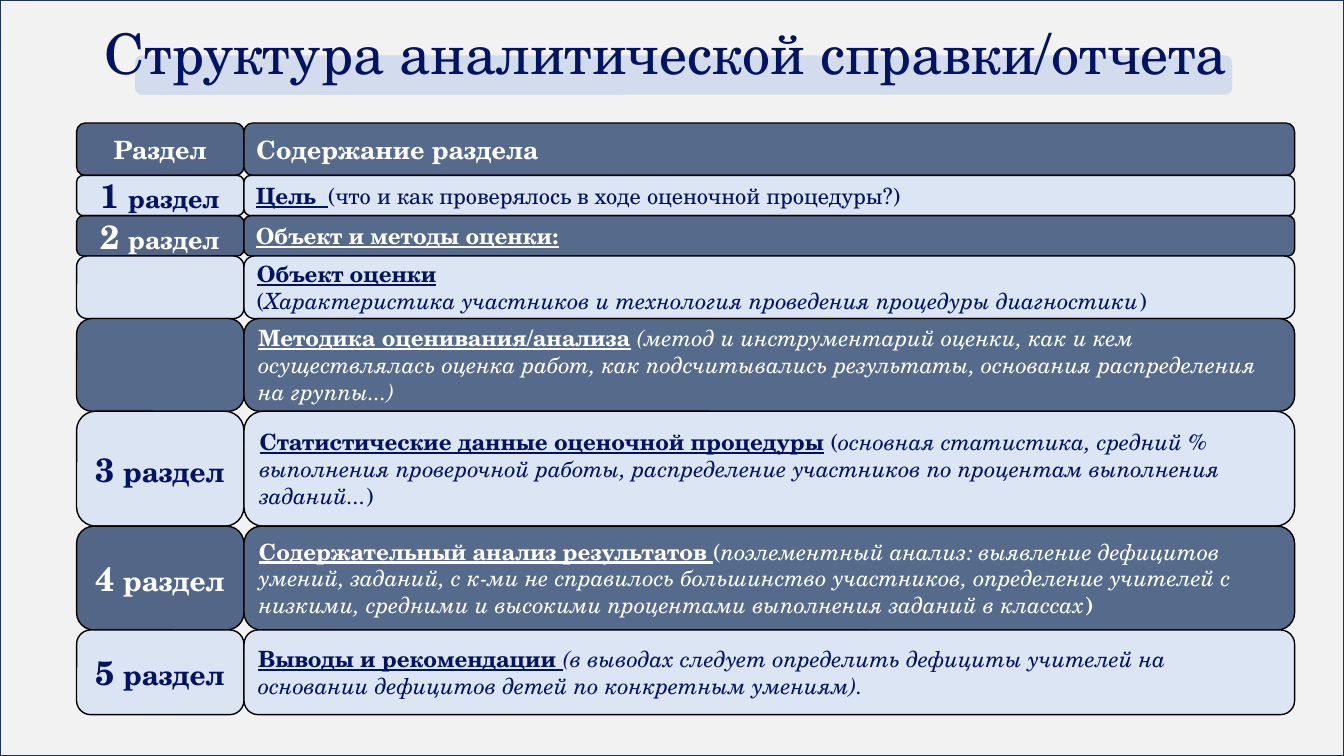
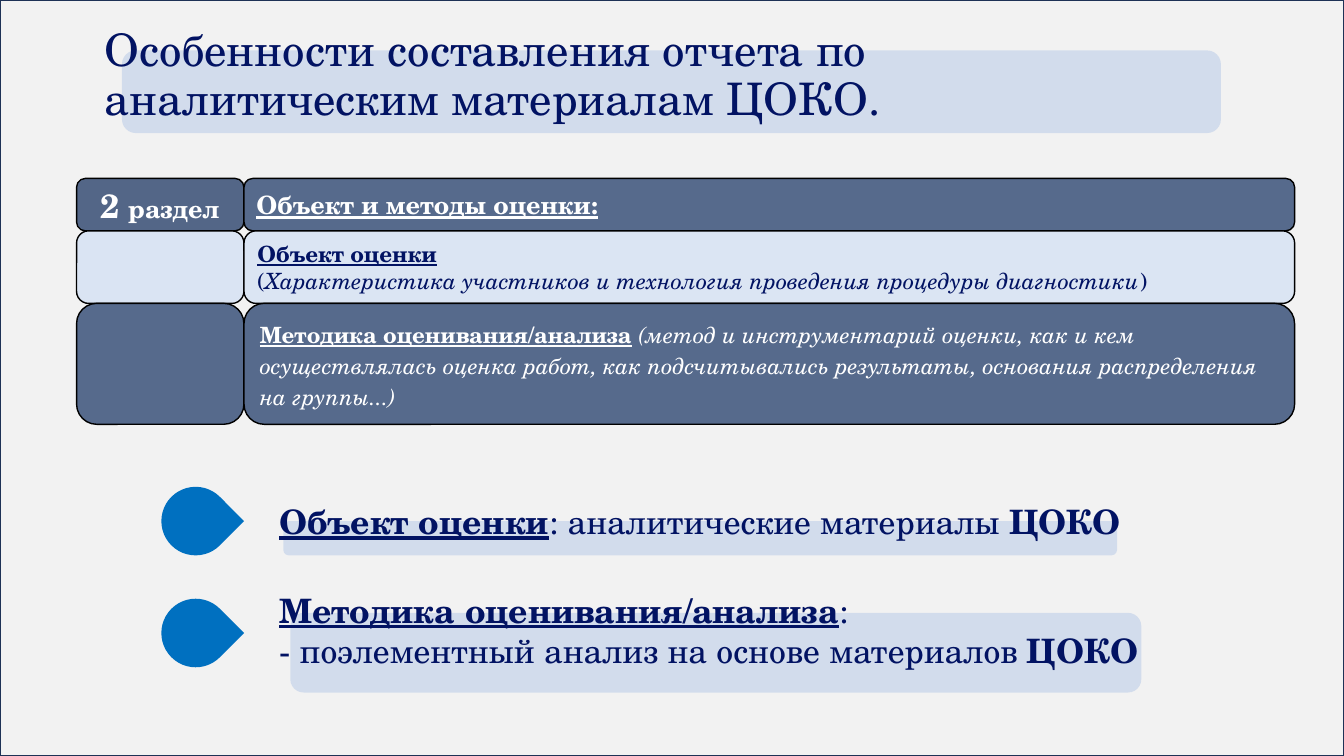
import pptx
import pptx.util
import pptx.dml.color
import pptx.enum.shapes
import pptx.enum.text
import pptx.oxml
import pptx.oxml.ns

WIDTH, HEIGHT = 13.33, 7.5
FONT = "TeX Gyre Schola"
PAGE, PAGE_EDGE = "F2F2F2", "1E3256"
NAVY, WHITE, BLACK = "021363", "FFFFFF", "000000"
DARK, LIGHT = "566A8C", "DBE5F3"
LABEL_DARK, LABEL_LIGHT = "1E3864", "DAE4F3"
HIGHLIGHT, MARKER = "B4C7E7", "0070C0"
TABLE_LEFT, LABEL_WIDTH, CONTENT_WIDTH = 0.76, 1.66, 10.42

SHAPES = pptx.enum.shapes.MSO_SHAPE
ALIGN = pptx.enum.text.PP_ALIGN
MIDDLE = pptx.enum.text.MSO_ANCHOR.MIDDLE

OBJECT_TEXT = [
    [("Объект оценки", "bu", 16)],
    [("(", "", 16),
     ("Характеристика участников и технология проведения процедуры диагностики", "i", 16),
     (")", "", 16)],
]
METHOD_TEXT = [[
    ("Методика оценивания/анализа", "bu", 16), (" ", "", 16),
    ("(метод и инструментарий оценки, как и кем осуществлялась оценка работ, "
     "как подсчитывались результаты, основания распределения на группы...)", "i", 16),
]]


def inches(*lengths):
    return [pptx.util.Inches(length) for length in lengths]


def paint(colour_owner, colour, opacity=100):
    colour_owner.solid()
    colour_owner.fore_color.rgb = pptx.dml.color.RGBColor.from_string(colour)
    if opacity < 100:
        choice = colour_owner.fore_color._xFill[0]
        alpha = pptx.oxml.parse_xml(
            f'<a:alpha {pptx.oxml.ns.nsdecls("a")} val="{opacity * 1000}"/>')
        choice.append(alpha)


def add_box(slide, kind, box, fill, opacity=100, edge=None):
    shape = slide.shapes.add_shape(kind, *inches(*box))
    shape.shadow.inherit = False
    paint(shape.fill, fill, opacity)
    if edge:
        paint(shape.line.fill, edge)
        shape.line.width = pptx.util.Pt(1)
    else:
        shape.line.fill.background()
    return shape


def write(frame, paragraphs, colour, align=ALIGN.LEFT, spacing=None):
    frame.word_wrap = True
    for index, pieces in enumerate(paragraphs):
        paragraph = frame.add_paragraph() if index else frame.paragraphs[0]
        paragraph.alignment = align
        if spacing:
            paragraph.line_spacing = spacing
        for words, style, size in pieces:
            run = paragraph.add_run()
            run.text = words
            run.font.name = FONT
            run.font.size = pptx.util.Pt(size)
            run.font.bold = "b" in style
            run.font.italic = "i" in style
            run.font.underline = "u" in style
            paint(run.font.fill, colour)


def add_page(deck, heading, size, heading_box, band_box):
    slide = deck.slides.add_slide(deck.slide_layouts[5])
    title = slide.shapes.title
    page = add_box(slide, SHAPES.RECTANGLE, (0, 0, WIDTH, HEIGHT), PAGE, edge=PAGE_EDGE)
    band = add_highlight(slide, band_box)
    for backdrop in (page, band):
        title._element.addprevious(backdrop._element)
    title.left, title.top, title.width, title.height = inches(*heading_box)
    title.text_frame.auto_size = pptx.enum.text.MSO_AUTO_SIZE.NONE
    title.text_frame.vertical_anchor = MIDDLE
    write(title.text_frame, [[(heading, "", size)]], NAVY, spacing=0.9)
    return slide


def add_highlight(slide, box):
    return add_box(slide, SHAPES.ROUNDED_RECTANGLE, box, HIGHLIGHT, 50)


def add_cell(slide, box, fill, opacity, paragraphs, colour, align, spacing=None):
    cell = add_box(slide, SHAPES.ROUNDED_RECTANGLE, box, fill, opacity, BLACK)
    cell.text_frame.vertical_anchor = MIDDLE
    write(cell.text_frame, paragraphs, colour, align, spacing)


def add_sections(slide, top, rows):
    for index, (height, label, content, spacing) in enumerate(rows):
        dark = index % 2 == 0
        colour = WHITE if dark else NAVY
        label_fill, opacity = LABEL_LIGHT, 100
        if dark:
            label_fill, opacity = (LABEL_DARK, 75) if label else (DARK, 100)
        add_cell(slide, (TABLE_LEFT, top, LABEL_WIDTH, height),
                 label_fill, opacity, label, colour, ALIGN.CENTER)
        add_cell(slide, (TABLE_LEFT + LABEL_WIDTH, top, CONTENT_WIDTH, height),
                 DARK if dark else LIGHT, 100, content, colour, ALIGN.LEFT, spacing)
        top += height


def section_label(number, size):
    return [[(number, "b", 24), (" ", "b", 20), ("раздел", "b", size)]]


def add_point(slide, box, highlight_box, marker_top, paragraphs):
    add_highlight(slide, highlight_box)
    drop = add_box(slide, SHAPES.TEAR, (1.6, marker_top, 0.68, 0.68), MARKER)
    drop.rotation = 45
    statement = slide.shapes.add_textbox(*inches(*box))
    write(statement.text_frame, paragraphs, NAVY)


def build_structure(deck):
    slide = add_page(deck, "Структура аналитической справки/отчета", 40,
                     (0.94, 0.15, 11.46, 0.82), (1.34, 0.55, 10.88, 0.39))
    add_sections(slide, 1.22, [
        (0.52, [[("Раздел", "b", 18)]], [[("Содержание раздела", "b", 18)]], None),
        (0.4, section_label("1", 18), [[
            ("Цель", "bu", 16), ("  ", "u", 16),
            ("(что и как проверялось в ходе оценочной процедуры?)", "", 16)]], None),
        (0.4, section_label("2", 18), [[("Объект и методы оценки:", "bu", 16)]], None),
        (0.62, [], OBJECT_TEXT, None),
        (0.92, [], METHOD_TEXT, None),
        (1.14, section_label("3", 20), [[
            ("Статистические данные оценочной процедуры", "bu", 16), (" (", "", 16),
            ("основная статистика, средний % выполнения проверочной работы, "
             "распределение участников по процентам выполнения заданий...", "i", 16),
            (")", "", 16)]], None),
        (1.03, section_label("4", 20), [[
            ("Содержательный анализ результатов ", "bu", 16), ("(", "", 16),
            ("поэлементный анализ: выявление дефицитов умений, заданий, с к-ми не "
             "справилось большинство участников, определение учителей с низкими, "
             "средними и высокими процентами выполнения заданий в классах", "i", 16),
            (")", "b", 16)]], None),
        (0.84, section_label("5", 20), [[
            ("Выводы и рекомендации ", "bu", 16),
            ("(в выводах следует определить дефициты учителей на основании "
             "дефицитов детей по конкретным умениям).", "i", 16)]], None),
    ])


def build_features(deck):
    slide = add_page(deck, "Особенности составления отчета по аналитическим материалам ЦОКО.",
                     32, (0.94, 0.35, 11.18, 0.82), (1.21, 0.5, 10.9, 0.82))
    add_sections(slide, 1.77, [
        (0.52, section_label("2", 18), [[("Объект и методы оценки:", "bu", 18)]], None),
        (0.72, [], OBJECT_TEXT, None),
        (1.2, [], METHOD_TEXT, 1.15),
    ])
    add_point(slide, (2.67, 4.92, 8.65, 0.5), (2.81, 5.17, 8.27, 0.34), 4.83, [
        [("Объект оценки", "bu", 24), (": аналитические материалы ", "", 24),
         ("ЦОКО", "b", 24)]])
    add_point(slide, (2.67, 5.8, 9.25, 0.91), (2.88, 6.08, 8.44, 0.79), 5.94, [
        [("Методика оценивания/анализа", "bu", 24), (":", "", 24)],
        [("- поэлементный анализ на основе материалов ", "", 24), ("ЦОКО", "b", 24)]])


def main():
    deck = pptx.Presentation()
    deck.slide_width, deck.slide_height = inches(WIDTH, HEIGHT)
    build_structure(deck)
    build_features(deck)
    deck.save("out.pptx")


if __name__ == "__main__":
    main()
